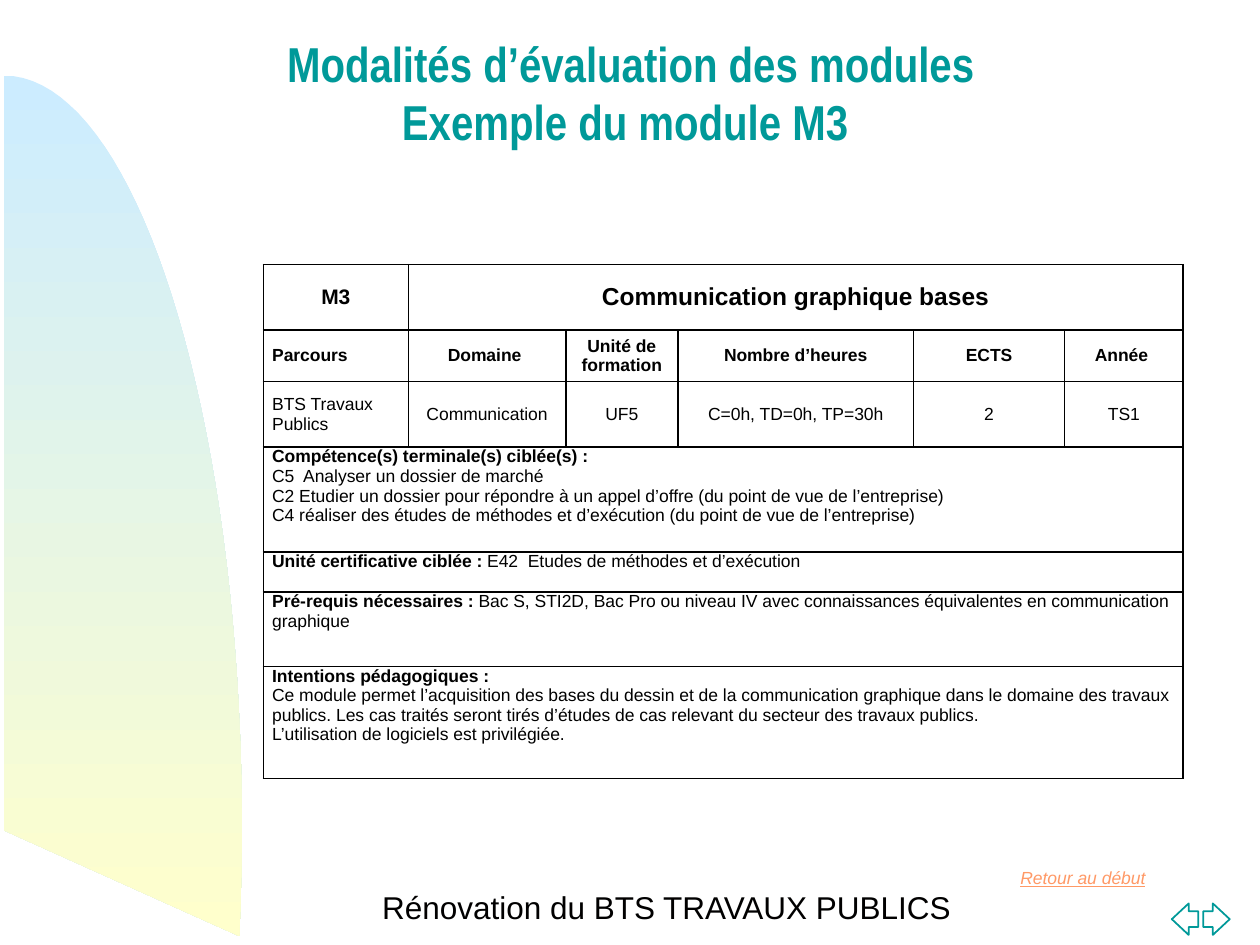
from lxml import etree
from pptx import Presentation
from pptx.dml.color import RGBColor
from pptx.enum.shapes import MSO_SHAPE
from pptx.enum.text import MSO_ANCHOR, MSO_AUTO_SIZE, PP_ALIGN
from pptx.oxml.ns import qn
from pptx.util import Inches, Pt

LEFT, CENTER = PP_ALIGN.LEFT, PP_ALIGN.CENTER
TOP, MIDDLE = MSO_ANCHOR.TOP, MSO_ANCHOR.MIDDLE
NO_AUTOFIT = MSO_AUTO_SIZE.NONE
LEFT_ARROW, RIGHT_ARROW = MSO_SHAPE.LEFT_ARROW, MSO_SHAPE.RIGHT_ARROW

TEAL = RGBColor(0x00, 0x99, 0x99)
ORANGE = RGBColor(0xFF, 0x99, 0x66)
SKY = RGBColor(0xCC, 0xEC, 0xFF)
CREAM = RGBColor(0xFF, 0xFF, 0xCC)
WHITE = RGBColor(0xFF, 0xFF, 0xFF)
BLACK = RGBColor(0x00, 0x00, 0x00)
NEAR_BLACK = RGBColor(0x01, 0x00, 0x00)

COLUMN_WIDTHS = [1.15, 1.25, 0.89, 1.87, 1.2, 0.94]
ROW_HEIGHTS = [0.52, 0.41, 0.52, 0.83, 0.32, 0.59, 0.89]
HEADINGS = ["Parcours ", "Domaine ", "Unité de formation", "Nombre d’heures", "ECTS", "Année "]
MODULE_VALUES = ["BTS Travaux Publics ", "Communication", "UF5", "C=0h, TD=0h, TP=30h", "2", "TS1"]
DETAILS = [
    [
        [("Compétence(s) terminale(s) ciblée(s)\u00a0:", True)],
        [("C5  Analyser un dossier de marché", False)],
        [("C2 Etudier un dossier pour répondre à un appel d’offre (du point de vue de l’entreprise)", False)],
        [("C4 réaliser des études de méthodes et d’exécution (du point de vue de l’entreprise)", False)],
    ],
    [[("Unité certificative ciblée\u00a0: ", True), ("E42  Etudes de méthodes et d’exécution", False)]],
    [[
        ("Pré-requis nécessaires : ", True),
        ("Bac S, STI2D, Bac Pro ou niveau IV avec connaissances équivalentes "
         "en communication graphique", False),
    ]],
    [
        [("Intentions pédagogiques\u00a0:", True)],
        [("Ce module permet l’acquisition des bases du dessin et de la communication graphique "
          "dans le domaine des travaux publics. Les cas traités seront tirés d’études de cas "
          "relevant du secteur des travaux publics.", False)],
        [("L’utilisation de logiciels est privilégiée.", False)],
    ],
]


def format_font(font, size, color, name="Arial", bold=False):
    font.size = Pt(size)
    font.color.rgb = color
    font.name = name
    font.bold = bold


def curve_points(start, control_1, control_2, end, steps=40):
    points = []
    for step in range(1, steps + 1):
        t = step / steps
        weights = [(1 - t) ** 3, 3 * t * (1 - t) ** 2, 3 * t ** 2 * (1 - t), t ** 3]
        corners = list(zip(start, control_1, control_2, end))
        points.append(tuple(Inches(sum(w * c for w, c in zip(weights, axis))) for axis in corners))
    return points


def add_side_wing(slide):
    outline = curve_points((0.03, 0.6), (1.07, 0.6), (1.92, 3.28), (1.92, 6.59))
    outline += curve_points((1.92, 6.59), (1.92, 6.87), (1.91, 7.15), (1.9, 7.43))
    outline.append((Inches(0.03), Inches(6.59)))
    builder = slide.shapes.build_freeform(Inches(0.03), Inches(0.6))
    builder.add_line_segments(outline, close=True)
    wing = builder.convert_to_shape()
    wing.shadow.inherit = False
    wing.line.fill.background()
    wing.fill.gradient()
    wing.fill.gradient_angle = 270
    for stop, position, color in zip(wing.fill.gradient_stops, (0, 1), (SKY, CREAM)):
        stop.position = position
        stop.color.rgb = color


def add_title(slide):
    title = slide.shapes.title
    title.left, title.top = Inches(0.67), Inches(0.21)
    title.width, title.height = Inches(8.58), Inches(1.04)
    frame = title.text_frame
    frame.text = " Modalités d’évaluation des modules\nExemple du module M3"
    frame.auto_size = NO_AUTOFIT
    frame.vertical_anchor = MIDDLE
    for paragraph in frame.paragraphs:
        paragraph.alignment = CENTER
        paragraph.line_spacing = 1.0
        paragraph.space_before = Pt(0)
        format_font(paragraph.runs[0].font, 28, TEAL, "Arial Narrow", True)


def add_label(slide, text, left, top, width, height, size, color, alignment):
    label = slide.shapes.add_textbox(Inches(left), Inches(top), Inches(width), Inches(height))
    label.text_frame.word_wrap = True
    paragraph = label.text_frame.paragraphs[0]
    paragraph.text = text
    paragraph.alignment = alignment
    font = paragraph.runs[0].font
    format_font(font, size, color)
    return font


def add_navigation_arrow(slide, direction, left):
    arrow = slide.shapes.add_shape(direction, Inches(left), Inches(7.17), Inches(0.21), Inches(0.25))
    arrow.adjustments[0] = 0.5
    arrow.adjustments[1] = 0.638
    arrow.shadow.inherit = False
    arrow.fill.solid()
    arrow.fill.fore_color.rgb = WHITE
    arrow.line.color.rgb = TEAL
    arrow.line.width = Pt(1)


def set_borders(cell):
    properties = cell._tc.get_or_add_tcPr()
    for side in ("a:lnL", "a:lnR", "a:lnT", "a:lnB"):
        border = etree.SubElement(properties, qn(side), w=str(Pt(1)))
        fill = etree.SubElement(border, qn("a:solidFill"))
        etree.SubElement(fill, qn("a:srgbClr"), val=str(BLACK))


def fill_cell(cell, paragraphs, size=10, alignment=LEFT, anchor=MIDDLE):
    cell.vertical_anchor = anchor
    cell.margin_left = cell.margin_right = Inches(0.07)
    cell.margin_top = cell.margin_bottom = 0
    frame = cell.text_frame
    for index, parts in enumerate(paragraphs):
        paragraph = frame.add_paragraph() if index else frame.paragraphs[0]
        paragraph.alignment = alignment
        for text, bold in parts:
            run = paragraph.add_run()
            run.text = text
            format_font(run.font, size, BLACK, bold=bold)


def add_module_table(slide):
    frame = slide.shapes.add_table(
        len(ROW_HEIGHTS), len(COLUMN_WIDTHS), Inches(2.09), Inches(2.1),
        Inches(sum(COLUMN_WIDTHS)), Inches(sum(ROW_HEIGHTS)))
    table = frame.table
    table.first_row = table.horz_banding = False
    for column, width in zip(table.columns, COLUMN_WIDTHS):
        column.width = Inches(width)
    for row, height in zip(table.rows, ROW_HEIGHTS):
        row.height = Inches(height)
    for cell in table.iter_cells():
        set_borders(cell)
        cell.fill.background()

    last = len(COLUMN_WIDTHS) - 1
    table.cell(0, 1).merge(table.cell(0, last))
    fill_cell(table.cell(0, 0), [[("M3", True)]], 12, CENTER)
    fill_cell(table.cell(0, 1), [[("Communication graphique bases", True)]], 14, CENTER)
    for row, (texts, bold) in enumerate([(HEADINGS, True), (MODULE_VALUES, False)], start=1):
        for column, text in enumerate(texts):
            fill_cell(table.cell(row, column), [[(text, bold)]], alignment=CENTER if column else LEFT)
    for row, paragraphs in enumerate(DETAILS, start=3):
        table.cell(row, 0).merge(table.cell(row, last))
        fill_cell(table.cell(row, 0), paragraphs, anchor=TOP)


def main():
    presentation = Presentation()
    presentation.slide_width, presentation.slide_height = Inches(10), Inches(7.5)
    slide = presentation.slides.add_slide(presentation.slide_layouts[5])
    add_side_wing(slide)
    return_font = add_label(slide, "Retour au début", 8, 6.83, 1.67, 0.67, 10, ORANGE, LEFT)
    return_font.italic = return_font.underline = True
    add_navigation_arrow(slide, LEFT_ARROW, 9.3)
    add_navigation_arrow(slide, RIGHT_ARROW, 9.55)
    add_label(slide, "Rénovation du BTS TRAVAUX PUBLICS", 2.83, 7, 4.92, 0.33, 18, NEAR_BLACK, CENTER)
    add_module_table(slide)
    add_title(slide)
    presentation.save("out.pptx")


main()
